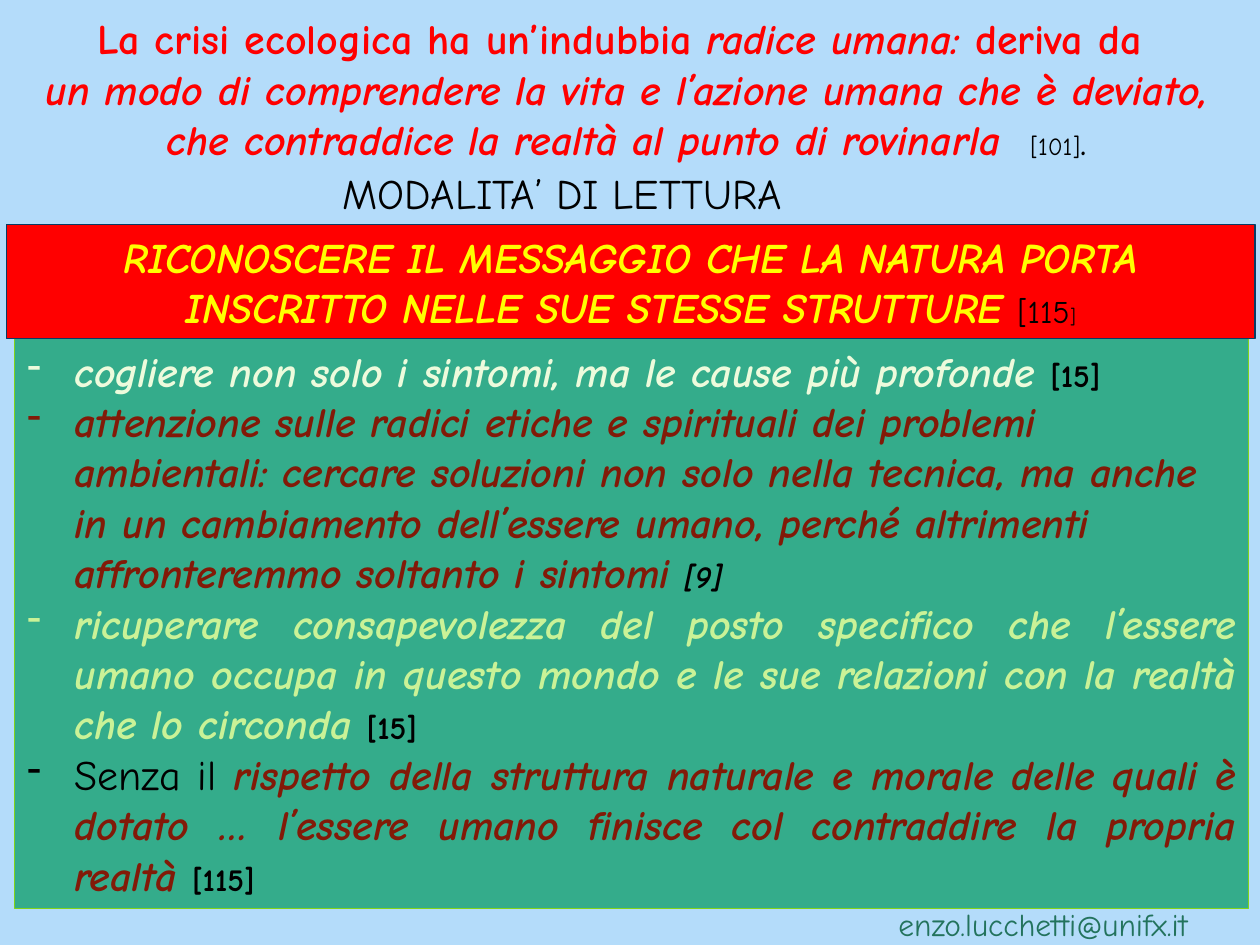
from lxml import etree
from pptx import Presentation
from pptx.dml.color import RGBColor
from pptx.enum.shapes import MSO_SHAPE as Shape
from pptx.enum.text import MSO_ANCHOR as Anchor, MSO_AUTO_SIZE as AutoSize, PP_ALIGN as Align
from pptx.oxml.ns import qn
from pptx.util import Cm, Pt

FONT = "Comic Neue"
COLORS = {
    "sky": "B4DCFA", "red": "FF0000", "black": "000000", "yellow": "FFFF00",
    "navy": "073C65", "green": "34AC8B", "lime": "81D31A", "cream": "EDFBDC",
    "brown": "821A08", "pale": "CAF297", "teal": "23735D",
}


def color(name):
    return RGBColor.from_string(COLORS[name])


def add_spans(para, spans):
    """Append runs given as (text, colour, style letters b/i, size)."""
    for text, tint, style, size in spans:
        span = para.add_run()
        span.text = text
        font = span.font
        font.name, font.size = FONT, Pt(size)
        font.bold, font.italic = "b" in style, "i" in style
        font.color.rgb = color(tint)


def add_dash(para):
    properties = para._p.get_or_add_pPr()
    indent = Cm(0.95)
    properties.set("marL", str(indent))
    properties.set("indent", str(-indent))
    etree.SubElement(properties, qn("a:buFontTx"))
    etree.SubElement(properties, qn("a:buChar")).set("char", "-")


def fill_text(box, paragraphs, align=Align.LEFT, wrap=True):
    frame = box.text_frame
    frame.word_wrap = wrap
    frame.auto_size = AutoSize.SHAPE_TO_FIT_TEXT
    for number, spans in enumerate(paragraphs):
        para = frame.add_paragraph() if number else frame.paragraphs[0]
        para.alignment = align
        add_spans(para, spans)
    return frame.paragraphs


def add_text(page, place, paragraphs, **options):
    box = page.shapes.add_textbox(*map(Cm, place))
    fill_text(box, paragraphs, **options)


def add_panel(page, place, fill, line, paragraphs, **options):
    box = page.shapes.add_shape(Shape.RECTANGLE, *map(Cm, place))
    box.shadow.inherit = False
    box.fill.solid()
    box.fill.fore_color.rgb = color(fill)
    box.line.color.rgb = color(line)
    box.line.width = Pt(0.75)
    box.text_frame.vertical_anchor = Anchor.MIDDLE
    return fill_text(box, paragraphs, **options)


def add_readings(page):
    readings = [
        [("cogliere non solo i sintomi, ma le cause più profonde ", "cream", "bi", 24),
         ("[15]", "black", "b", 18)],
        [("attenzione sulle radici etiche e spirituali dei problemi ambientali: "
          "cercare soluzioni non solo nella tecnica, ma anche in un cambiamento "
          "dell’essere umano, perché altrimenti affronteremmo soltanto i sintomi ",
          "brown", "bi", 24),
         ("[9]", "black", "bi", 18)],
        [("ricuperare consapevolezza del posto specifico che l’essere umano occupa "
          "in questo mondo e le sue relazioni con la realtà che lo circonda ",
          "pale", "bi", 24),
         ("[15]", "black", "b", 18)],
        [("Senza il ", "black", "", 24),
         ("rispetto della struttura naturale e morale delle quali è dotato … "
          "l’essere umano finisce col contraddire la propria realtà ",
          "brown", "bi", 24),
         ("[115]", "black", "b", 18)],
    ]
    paragraphs = add_panel(page, (0.3, 6.78, 24.87, 11.53), "green", "lime", readings)
    for para in paragraphs:
        add_dash(para)
    for para in paragraphs[2:]:
        para.alignment = Align.JUSTIFY


def main():
    deck = Presentation()
    deck.slide_width, deck.slide_height = Cm(25.4), Cm(19.05)
    page = deck.slides.add_slide(deck.slide_layouts[6])
    page.background.fill.solid()
    page.background.fill.fore_color.rgb = color("sky")

    add_text(page, (0, 0.13, 25.27, 3.33), [
        [("La crisi ecologica ha un’indubbia ", "red", "b", 24),
         ("radice umana: ", "red", "bi", 24),
         ("deriva da ", "red", "b", 24)],
        [("un modo di comprendere la vita e l’azione umana che è deviato, "
          "che contraddice la realtà al punto di rovinarla  ", "red", "bi", 24),
         ("[101]", "black", "", 14),
         (".", "black", "", 24)],
    ], align=Align.CENTER)
    add_readings(page)
    add_text(page, (17.86, 18.11, 7.44, 1.02),
             [[("enzo.lucchetti@unifx.it", "teal", "", 18)]], wrap=False)
    add_panel(page, (0.13, 4.52, 25.17, 2.31), "red", "navy", [
        [("RICONOSCERE IL MESSAGGIO CHE LA NATURA PORTA INSCRITTO NELLE SUE "
          "STESSE STRUTTURE ", "yellow", "bi", 24),
         ("[115", "black", "", 18),
         ("]", "black", "", 11)],
    ], align=Align.CENTER)
    add_text(page, (6.65, 3.25, 12.4, 1.27),
             [[("MODALITA’ DI LETTURA", "black", "", 24)]])

    deck.save("out.pptx")


if __name__ == "__main__":
    main()
